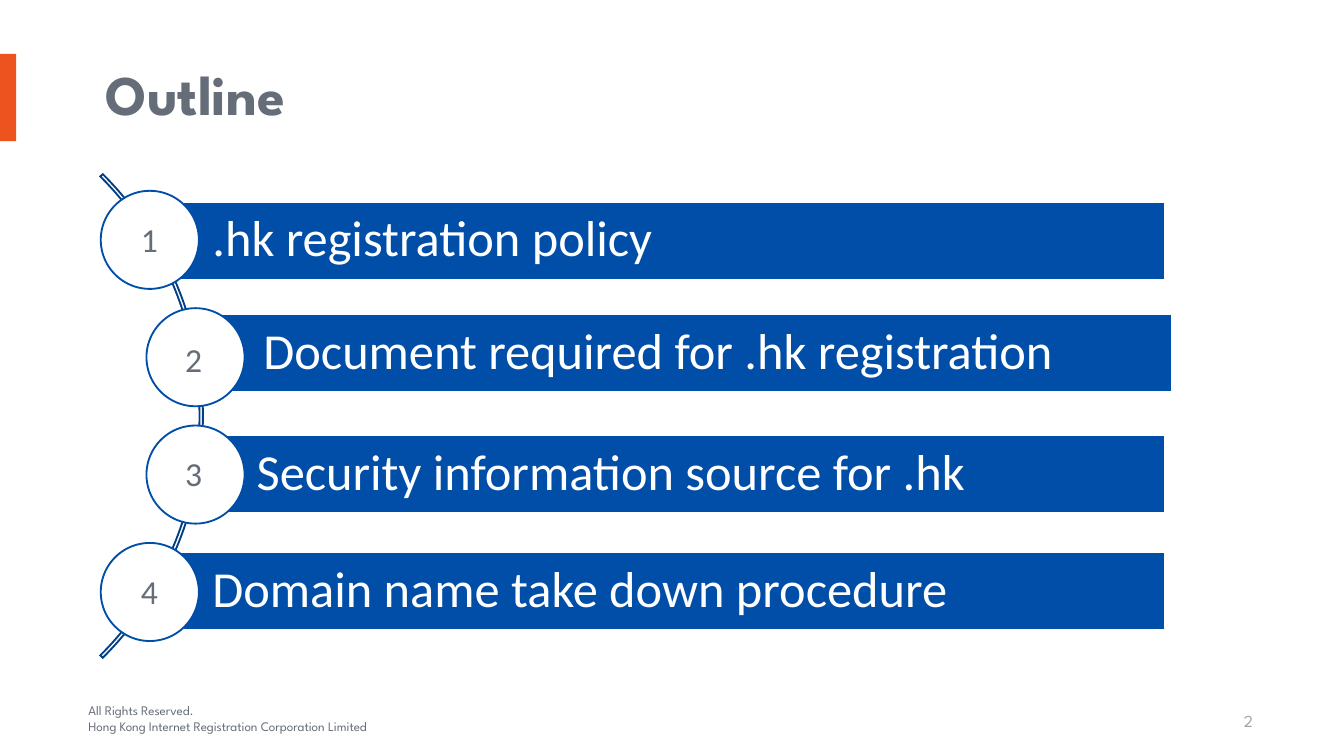
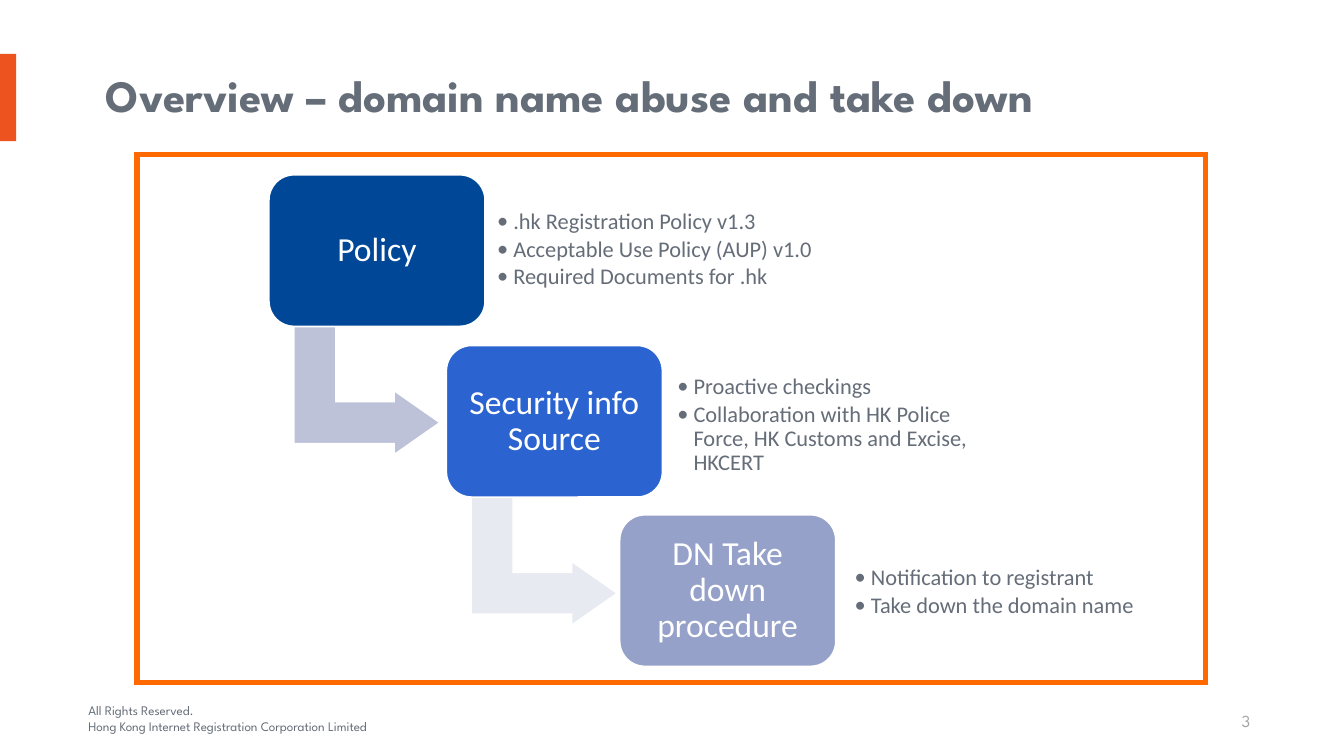
"""Build the outline and overview slides on domain name abuse."""
import dataclasses

import lxml.etree
import pptx
import pptx.dml.color
import pptx.enum.shapes
import pptx.enum.text
import pptx.oxml.ns
import pptx.util

COLOURS = {
    "text": "656D78", "folio": "9FA3A8", "white": "FFFFFF",
    "accent": "ED531F", "frame": "FF6900",
    "arc": "003E87", "bar": "004EA8",
    "policy": "004798", "security": "2B64D0", "procedure": "95A1C8",
    "arrow_dark": "BDC2D9", "arrow_light": "E8EAF1",
}
HEADING_FONT = "League Spartan"
BODY_FONT = "Calibri"
SHAPES = pptx.enum.shapes.MSO_SHAPE
ALIGN = pptx.enum.text.PP_ALIGN
ANCHOR = pptx.enum.text.MSO_ANCHOR
DEFAULT_INSETS = (0.1, 0.05, 0.1, 0.05)

FOOTER = ["All Rights Reserved.", "Hong Kong Internet Registration Corporation Limited"]

# Each outline row: text, circle offset, bar offset, bar width, number offset
OUTLINE_ROWS = [
    (".hk registration policy", 0, (0.37, 0.08), 7.55, (0.2, 0.16)),
    ("Document required for .hk registration", 0.34, (0.75, 0.92), 7.22, (0.53, 1.05)),
    ("Security information source for .hk", 0.34, (0.7, 1.82), 7.22, (0.53, 1.9)),
    ("Domain name take down procedure", 0, (0.37, 2.69), 7.55, (0.2, 2.78)),
]

# Each step: label, offset in the frame, fill, arrow fill, notes offset, notes
STEPS = [
    ("Policy", (0.98, 0.15), "policy", "arrow_dark", (1.65, 0.08, 2.54, 0.96),
     [".hk Registration Policy v1.3", "Acceptable Use Policy (AUP) v1.0",
      "Required Documents for .hk"]),
    ("Security info Source", (2.3, 1.42), "security", "arrow_light",
     (1.67, 0.14, 2.55, 0.91),
     ["Proactive checkings",
      "Collaboration with HK Police Force, HK Customs and Excise, HKCERT"]),
    ("DN Take down procedure", (3.59, 2.68), "procedure", None,
     (1.7, 0.12, 2.27, 0.91),
     ["Notification to registrant", "Take down the domain name"]),
]


@dataclasses.dataclass
class Box:
    """A rectangle in inches."""
    left: float
    top: float
    width: float
    height: float

    def inner(self, left, top, width, height):
        """Return a box placed relative to this one."""
        return Box(self.left + left, self.top + top, width, height)

    def lengths(self):
        """Return the four lengths for python-pptx."""
        return [pptx.util.Inches(value) for value in dataclasses.astuple(self)]


@dataclasses.dataclass
class Style:
    """The look of a block of text."""
    size: float
    colour: str = "text"
    font: str = BODY_FONT
    bold: bool = False
    align: object = ALIGN.LEFT
    anchor: object = ANCHOR.MIDDLE
    insets: tuple = DEFAULT_INSETS
    spacing: float = None
    after: float = 0
    bullet: bool = False
    wrap: bool = True


FOOTER_STYLE = Style(7, font=HEADING_FONT, anchor=ANCHOR.TOP)
FOLIO_STYLE = Style(9, "folio", HEADING_FONT, align=ALIGN.RIGHT)
BAR_STYLE = Style(27, "white", insets=(0.46, 0.07, 0.07, 0.07), spacing=0.9)
NUMBER_STYLE = Style(18, anchor=ANCHOR.TOP, wrap=False)
STEP_STYLE = Style(18, "white", align=ALIGN.CENTER,
                   insets=(0.07, 0.07, 0.07, 0.07), spacing=0.9)
NOTES_STYLE = Style(12, insets=(0.05, 0.05, 0.05, 0.05), spacing=0.9,
                    after=1.8, bullet=True)


def rgb(name):
    """Return a named colour."""
    return pptx.dml.color.RGBColor.from_string(COLOURS[name])


def add_bullet(para):
    """Give a paragraph a hanging round bullet."""
    properties = para._p.get_or_add_pPr()
    indent = pptx.util.Inches(0.12)
    properties.set("marL", str(indent))
    properties.set("indent", str(-indent))
    font = lxml.etree.SubElement(properties, pptx.oxml.ns.qn("a:buFont"))
    font.set("typeface", BODY_FONT)
    bullet = lxml.etree.SubElement(properties, pptx.oxml.ns.qn("a:buChar"))
    bullet.set("char", "•")


def write(shape, lines, style):
    """Write one paragraph per line into a shape."""
    frame = shape.text_frame
    frame.word_wrap = style.wrap
    frame.vertical_anchor = style.anchor
    (frame.margin_left, frame.margin_top, frame.margin_right,
     frame.margin_bottom) = [pptx.util.Inches(inset) for inset in style.insets]
    for index, line in enumerate(lines):
        para = frame.add_paragraph() if index else frame.paragraphs[0]
        para.alignment = style.align
        if style.spacing:
            para.line_spacing = style.spacing
        para.space_after = pptx.util.Pt(style.after)
        if style.bullet:
            add_bullet(para)
        span = para.add_run()
        span.text = line
        span.font.size = pptx.util.Pt(style.size)
        span.font.name = style.font
        span.font.bold = style.bold
        span.font.color.rgb = rgb(style.colour)


def add_text(page, box, lines, style):
    """Add a text box."""
    write(page.shapes.add_textbox(*box.lengths()), lines, style)


def add_shape(page, kind, box, fill=None, line=None, weight=1, adjustments=()):
    """Add a flat preset shape with sharp line corners."""
    shape = page.shapes.add_shape(kind, *box.lengths())
    shape.shadow.inherit = False
    for index, value in enumerate(adjustments):
        shape.adjustments[index] = value
    if fill:
        shape.fill.solid()
        shape.fill.fore_color.rgb = rgb(fill)
    else:
        shape.fill.background()
    if line:
        shape.line.color.rgb = rgb(line)
        shape.line.width = pptx.util.Pt(weight)
        outline = shape._element.spPr.find(pptx.oxml.ns.qn("a:ln"))
        corner = lxml.etree.SubElement(outline, pptx.oxml.ns.qn("a:miter"))
        corner.set("lim", "800000")
    else:
        shape.line.fill.background()
    return shape


def add_page(deck, title, title_size, number, folio_left):
    """Add a page with its footer, accent band, number and title."""
    page = deck.slides.add_slide(deck.slide_layouts[6])
    add_text(page, Box(0.56, 5.18, 2.68, 0.34), FOOTER, FOOTER_STYLE)
    add_shape(page, SHAPES.RECTANGLE, Box(0, 0.4, 0.12, 0.65), "accent")
    add_text(page, Box(folio_left, 5.21, 2.25, 0.3), [str(number)], FOLIO_STYLE)
    add_text(page, Box(0.69, 0.4, 8.62, 0.65), [title],
             Style(title_size, font=HEADING_FONT, bold=True, spacing=0.9))
    return page


def add_outline(page, box):
    """Draw numbered bars along an arc."""
    arc_size, circle_size = 5.09, 0.73
    add_shape(page, SHAPES.BLOCK_ARC,
              box.inner(-4.33, (box.height - arc_size) / 2, arc_size, arc_size),
              line="arc", adjustments=(189, 27, 0.005))
    step = (box.height - circle_size) / (len(OUTLINE_ROWS) - 1)
    for index, (text, shift, bar_at, width, number_at) in enumerate(OUTLINE_ROWS):
        bar = add_shape(page, SHAPES.RECTANGLE, box.inner(*bar_at, width, 0.58),
                        "bar", "white")
        write(bar, [text], BAR_STYLE)
        add_shape(page, SHAPES.OVAL,
                  box.inner(shift, index * step, circle_size, circle_size),
                  "white", "bar")
        add_text(page, box.inner(*number_at, 0.33, 0.4), [str(index + 1)], NUMBER_STYLE)


def add_overview(page, box):
    """Draw framed steps going down, with arrows and notes."""
    for label, step_at, fill, arrow_fill, notes_at, notes in STEPS:
        step = box.inner(*step_at, 1.61, 1.13)
        if arrow_fill:
            arrow = add_shape(page, SHAPES.BENT_UP_ARROW,
                              step.inner(0.25, 1.06, 0.96, 1.09), arrow_fill, "white",
                              adjustments=(0.328, 0.25, 0.358))
            arrow.rotation = 90
        card = add_shape(page, SHAPES.ROUNDED_RECTANGLE, step, fill, "white",
                         adjustments=(0.167,))
        write(card, [label], STEP_STYLE)
        add_text(page, step.inner(*notes_at), notes, NOTES_STYLE)
    add_shape(page, SHAPES.RECTANGLE, box, line="frame", weight=3)


def main():
    """Build and save the deck."""
    deck = pptx.Presentation()
    deck.slide_width = pptx.util.Inches(10)
    deck.slide_height = deck.slide_width * 9 // 16
    outline = add_page(deck, "Outline", 30, 2, 7.17)
    add_outline(outline, Box(0.75, 1.42, 7.97, 3.35))
    overview = add_page(deck, "Overview – domain name abuse and take down", 24, 3, 7.15)
    add_overview(overview, Box(1.02, 1.15, 7.95, 3.93))
    deck.save("out.pptx")


if __name__ == "__main__":
    main()
